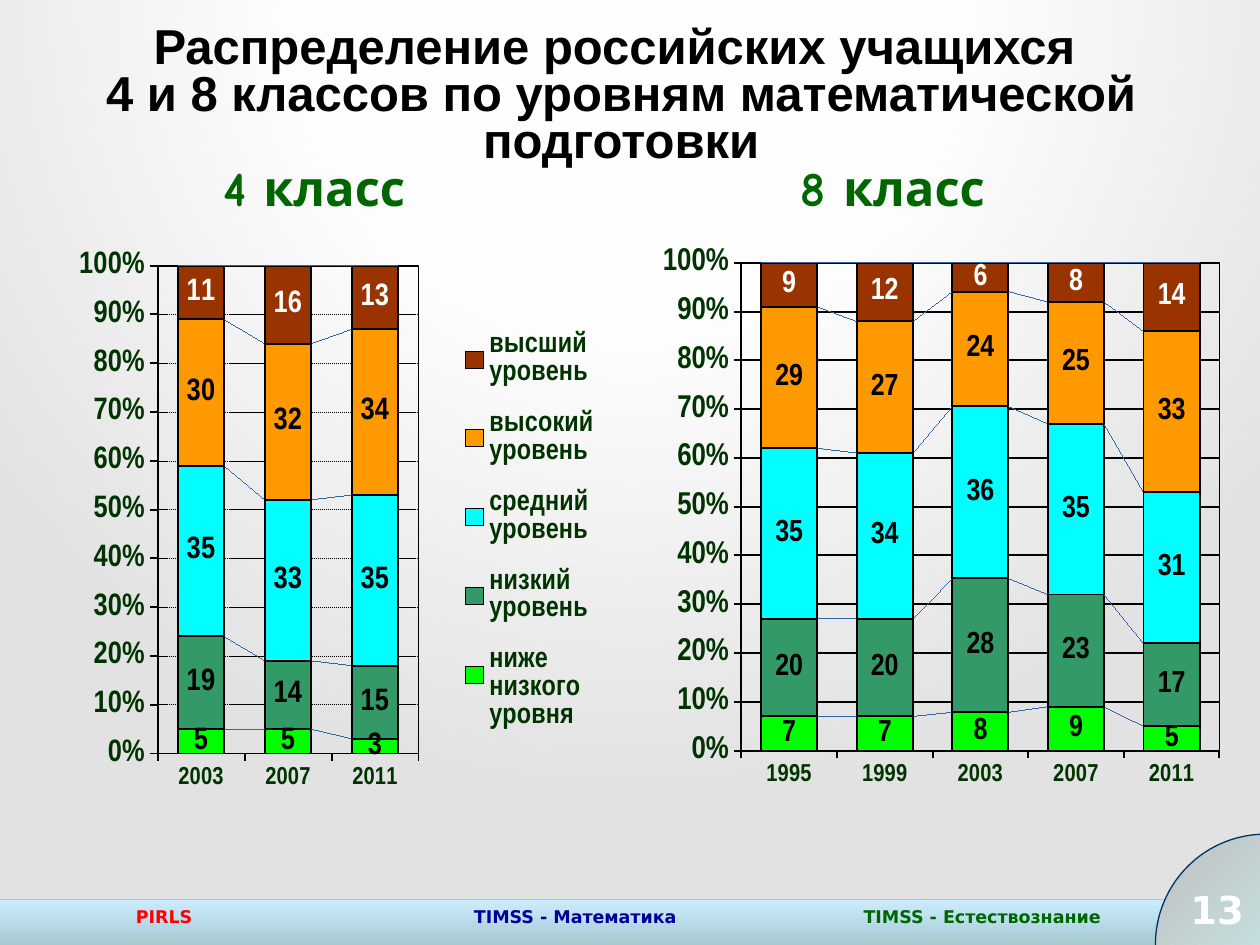
import pptx
import pptx.chart.data
import pptx.dml.color
import pptx.enum.chart
import pptx.enum.shapes
import pptx.enum.text
import pptx.oxml
import pptx.oxml.ns
import pptx.util

RGB = pptx.dml.color.RGBColor
Pt = pptx.util.Pt
qn = pptx.oxml.ns.qn
KIND = pptx.enum.shapes.MSO_SHAPE
ALIGN = pptx.enum.text.PP_ALIGN
MID = pptx.enum.text.MSO_ANCHOR.MIDDLE
TICK = pptx.enum.chart.XL_TICK_MARK

BLACK = RGB(0, 0, 0)
WHITE = RGB(255, 255, 255)
RED = RGB(255, 0, 0)
NAVY = RGB(0, 0, 0x99)
GREEN = RGB(0, 0x66, 0)
DARK = RGB(0, 0x33, 0)
EDGE = RGB(0, 0x33, 0x66)
SKY = RGB(0xCC, 0xEC, 0xFF)
STEEL = RGB(0x92, 0xB6, 0xB6)
GREY = RGB(0xBF, 0xBF, 0xBF)
PALE = RGB(0xCC, 0xFF, 0xFF)

NARROW, COMIC, SANS = "Arial Narrow", "Comic Neue", "DejaVu Sans"

# Levels from the bottom of each bar up: name, fill, label colour
LEVELS = [
    ("ниже низкого уровня", RGB(0, 255, 0), BLACK),
    ("низкий уровень", RGB(0x33, 0x99, 0x66), BLACK),
    ("средний уровень", RGB(0, 255, 255), BLACK),
    ("высокий уровень", RGB(255, 0x99, 0), BLACK),
    ("высший уровень", RGB(0x99, 0x33, 0), WHITE),
]
FOURTH = {
    "2003": (5, 19, 35, 30, 11),
    "2007": (5, 14, 33, 32, 16),
    "2011": (3, 15, 35, 34, 13),
}
EIGHTH = {
    "1995": (7, 20, 35, 29, 9),
    "1999": (7, 20, 34, 27, 12),
    "2003": (8, 28, 36, 24, 6),
    "2007": (9, 23, 35, 25, 8),
    "2011": (5, 17, 31, 33, 14),
}

deck = pptx.Presentation()
deck.slide_width = pptx.util.Inches(10)
deck.slide_height = pptx.util.Inches(7.5)
COL = deck.slide_width / 10
ROW = deck.slide_height / 7.5


def grid(x, y, w, h):
    """Turn columns and rows into slide lengths."""
    return int(x * COL), int(y * ROW), int(w * COL), int(h * ROW)


def node(tag, body=""):
    names = pptx.oxml.ns.nsdecls("a", "c", "p")
    return pptx.oxml.parse_xml(f"<{tag} {names}>{body}</{tag}>")


def style(font, name, size, color):
    font.name, font.size, font.bold = name, Pt(size), True
    font.color.rgb = color


def shape(slide, kind, box):
    item = slide.shapes.add_shape(kind, *grid(*box))
    item.shadow.inherit = False
    item.line.fill.background()
    return item


def blend(fill, ends, angle):
    fill.gradient()
    fill.gradient_angle = angle
    for stop, color in zip(fill.gradient_stops, ends):
        stop.color.rgb = color


def label(slide, text, box, size, color, align, wrap=True):
    frame = slide.shapes.add_textbox(*grid(*box)).text_frame
    frame.word_wrap = wrap
    para = frame.paragraphs[0]
    para.text, para.alignment = text, align
    style(para.font, SANS, size, color)


def backdrop(slide):
    stops = "".join(
        f'<a:gs pos="{pos}"><a:srgbClr val="{val}"/></a:gs>'
        for pos, val in ((0, "FFFFFF"), (40000, "FEFEFE"), (100000, "7F7F7F")))
    back = node("p:bg", (
        f'<p:bgPr><a:gradFill rotWithShape="1"><a:gsLst>{stops}</a:gsLst>'
        '<a:path path="circle"><a:fillToRect l="50000" t="-80000" r="50000"'
        ' b="180000"/></a:path></a:gradFill><a:effectLst/></p:bgPr>'))
    slide.element.cSld.insert(0, back)


def footer(slide, box):
    x, y, w, h = box
    bar = shape(slide, KIND.RECTANGLE, box)
    blend(bar.fill, (SKY, STEEL), 270)
    for text, left, wide, color, align in (
            ("PIRLS", 0.98, 0.79, RED, ALIGN.LEFT),
            ("TIMSS - Естествознание", 6.26, 3.07, GREEN, ALIGN.CENTER),
            ("TIMSS - Математика", 3.03, 3.07, NAVY, ALIGN.CENTER)):
        label(slide, text, (x + left, y, wide, 0.34), 10, color, align)


def veil(slide, box):
    """Lighten the backdrop above the footer."""
    pane = shape(slide, KIND.RECTANGLE, box)
    pane.fill.solid()
    pane.fill.fore_color.rgb = WHITE
    tint = pane.element.find(".//" + qn("a:srgbClr"))
    alpha = node("a:alpha")
    alpha.set("val", "78000")
    tint.append(alpha)


def badge(slide, box):
    x, y, w, h = box
    disc = shape(slide, KIND.OVAL, box)
    blend(disc.fill, (GREY, PALE), 315)
    disc.line.color.rgb, disc.line.width = EDGE, Pt(0.75)
    label(slide, "13", (x, y + 0.36, 0.8, 0.47), 22, WHITE, ALIGN.RIGHT, False)


def heading(slide, box):
    title = slide.shapes.title
    title.element.getparent().append(title.element)  # above the veil
    title.left, title.top, title.width, title.height = grid(*box)
    frame = title.text_frame
    frame.word_wrap, frame.vertical_anchor = True, MID
    frame.auto_size = pptx.enum.text.MSO_AUTO_SIZE.NONE
    para = frame.paragraphs[0]
    para.text = ("Распределение российских учащихся \v"
                 "4 и 8 классов по уровням математической подготовки")
    para.alignment, para.line_spacing = ALIGN.CENTER, 0.8
    style(para.font, "Arial", 28, BLACK)


def place(x, y, w, h, inner=True):
    """Manual layout, as shares of the chart."""
    target = '<c:layoutTarget val="inner"/>' if inner else ""
    modes = '<c:xMode val="edge"/><c:yMode val="edge"/>'
    sizes = "".join(f'<c:{k} val="{v}"/>' for k, v in zip("xywh", (x, y, w, h)))
    return node("c:layout", f"<c:manualLayout>{target}{modes}{sizes}</c:manualLayout>")


def bars(slide, box, rows, area, gap, sizes, rule, dash=None, key=None):
    data = pptx.chart.data.CategoryChartData()
    data.categories = list(rows)
    for (name, _, _), vals in zip(LEVELS, zip(*rows.values())):
        data.add_series(name, vals)
    kind = pptx.enum.chart.XL_CHART_TYPE.COLUMN_STACKED_100
    chart = slide.shapes.add_chart(kind, *grid(*box), data).chart
    chart.has_title = False
    style(chart.font, COMIC, 20, BLACK)

    # Bars and their values
    plot = chart.plots[0]
    plot.gap_width, plot.overlap, plot.vary_by_categories = gap, 100, False
    for part, (_, fill, ink) in zip(plot.series, LEVELS):
        part.format.fill.solid()
        part.format.fill.fore_color.rgb = fill
        part.format.line.color.rgb, part.format.line.width = BLACK, Pt(1.1)
        part.data_labels.show_value = True
        style(part.data_labels.font, NARROW, sizes[0], ink)

    # Axes and grid lines
    for axis, size in ((chart.category_axis, 14), (chart.value_axis, sizes[1])):
        axis.major_tick_mark, axis.minor_tick_mark = TICK.OUTSIDE, TICK.NONE
        axis.format.line.color.rgb, axis.format.line.width = BLACK, Pt(1.1)
        style(axis.tick_labels.font, NARROW, size, DARK)
    axis.tick_labels.number_format = "0%"
    axis.tick_labels.number_format_is_linked = False
    axis.has_major_gridlines = True
    line = axis.major_gridlines.format.line
    line.color.rgb, line.width = BLACK, Pt(rule)
    if dash:
        line.dash_style = dash

    # Lines joining the bars, frame and place of the plot
    field = chart.element.find(".//" + qn("c:plotArea"))
    field.find(".//" + qn("c:overlap")).addnext(node("c:serLines"))
    for old in field.findall(qn("c:layout")):
        field.remove(old)
    field.insert(0, place(*area))
    field.append(node("c:spPr", (
        '<a:noFill/><a:ln w="12700"><a:solidFill><a:srgbClr val="000000"/>'
        '</a:solidFill></a:ln>')))

    chart.has_legend = key is not None
    if key:
        chart.legend.position = pptx.enum.chart.XL_LEGEND_POSITION.RIGHT
        chart.legend.include_in_layout = False
        style(chart.legend.font, NARROW, 16.3, DARK)
        legend = chart.legend.font and chart.element.find(".//" + qn("c:legend"))
        for old in legend.findall(qn("c:layout")):
            legend.remove(old)
        legend.find(qn("c:legendPos")).addnext(place(*key, inner=False))


def grades(slide, box):
    table = slide.shapes.add_table(1, 2, *grid(*box)).table
    table.first_row = table.horz_banding = False
    look = table._tbl.tblPr.find(qn("a:tableStyleId"))
    look.text = "{2D5ABB26-0587-4C30-8999-92F81FD0307C}"  # no style, no grid
    for cell, text, inset in zip(table.rows[0].cells, ("4 класс", "8 класс"), (0.1, 1.35)):
        cell.fill.background()
        cell.vertical_anchor = MID
        cell.margin_left = int(inset * COL)
        para = cell.text_frame.paragraphs[0]
        para.text = text
        style(para.font, COMIC, 28, GREEN)


def main():
    slide = deck.slides.add_slide(deck.slide_layouts[5])
    backdrop(slide)
    footer(slide, (0, 7.14, 10, 0.55))
    veil(slide, (0, 0, 10, 7.14))
    badge(slide, (9.17, 6.62, 1.75, 1.75))
    heading(slide, (0.35, 0.52, 9.16, 0.5))
    bars(slide, (0.14, 1.77, 5.05, 4.84), FOURTH, (0.22, 0.07, 0.41, 0.8), 90,
         (17.7, 17.7), 0.28, pptx.enum.dml.MSO_LINE.SQUARE_DOT,
         (0.68, 0.14, 0.25, 0.73))
    bars(slide, (4.72, 1.8, 5.06, 4.78), EIGHTH, (0.23, 0.06, 0.75, 0.81), 70,
         (17.4, 18), 1.1)
    grades(slide, (1.67, 1.23, 6.67, 0.57))
    deck.save("out.pptx")


if __name__ == "__main__":
    main()
